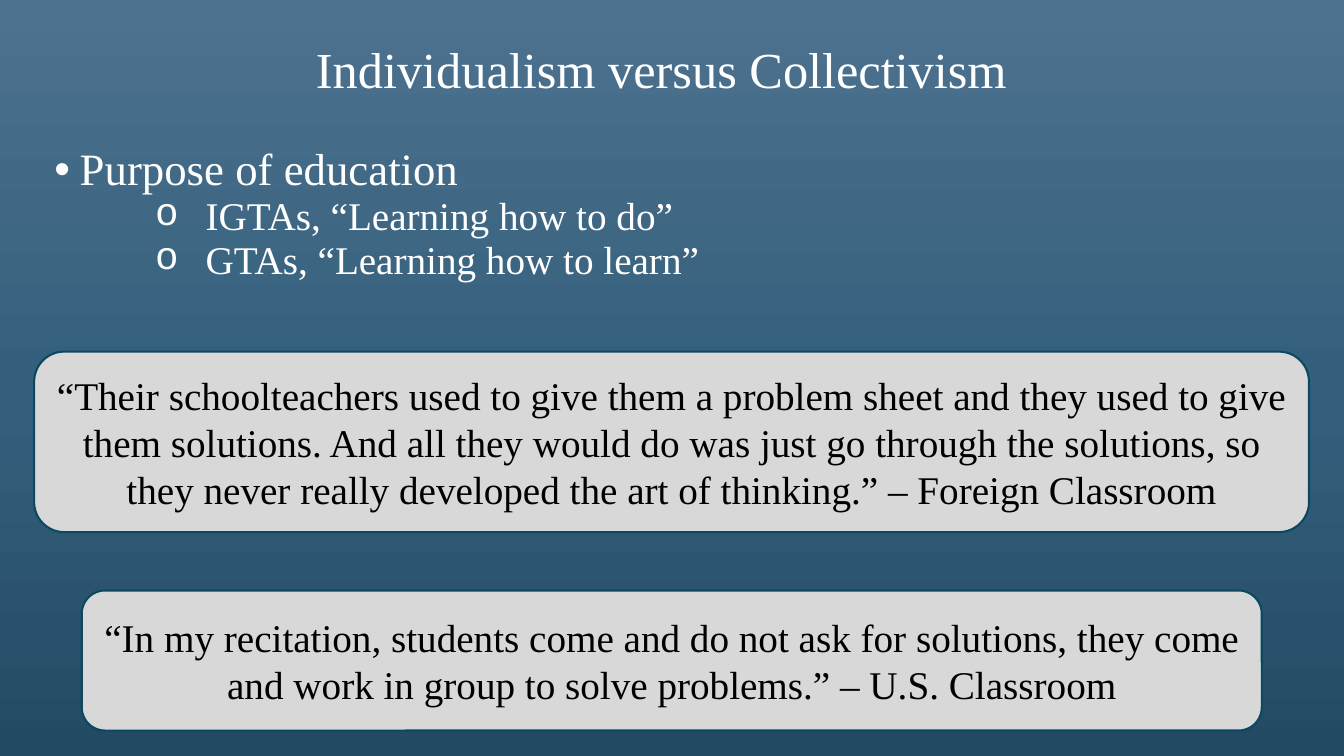
from copy import deepcopy

from lxml import etree
from pptx import Presentation
from pptx import util as u
from pptx.dml.color import RGBColor
from pptx.enum import shapes, text
from pptx.oxml.ns import qn


def colour(code):
    """Turn a hex string into a colour."""
    return RGBColor.from_string(code)


class Deck:
    """Hold the style and the current slide."""

    font = "Times New Roman"
    light, dark = "FFFFFF", "000000"
    panel, border = "D8D8D8", "0B4960"
    sky = [(0, "4D728F"), (0.5, "35607D"), (1, "234A63")]

    def __init__(self):
        """Start a wide presentation with one title-only slide."""
        self.deck = Presentation()
        self.deck.slide_width, self.deck.slide_height = u.Cm(33.87), u.Cm(19.05)
        self.slide = self.deck.slides.add_slide(self.deck.slide_layouts[5])

    def background(self):
        """Shade the slide from top to bottom."""
        fill = self.slide.background.fill
        fill.gradient()
        fill.gradient_angle = 270
        stop_list = self.slide.element.find(".//" + qn("a:gsLst"))
        stop_list.append(deepcopy(stop_list[0]))
        for stop, (position, code) in zip(fill.gradient_stops, self.sky):
            stop.position = position
            stop.color.rgb = colour(code)

    def style(self, paragraph, size, code):
        """Format every run of a paragraph."""
        for run in paragraph.runs:
            run.font.name = self.font
            run.font.size = u.Pt(size)
            run.font.color.rgb = colour(code)

    def title(self, wording, box):
        """Fill and place the title."""
        heading = self.slide.shapes.title
        heading.left, heading.top, heading.width, heading.height = map(u.Cm, box)
        frame = heading.text_frame
        frame.text = wording
        frame.word_wrap = True
        frame.auto_size = text.MSO_AUTO_SIZE.NONE
        frame.vertical_anchor = text.MSO_ANCHOR.TOP
        frame.paragraphs[0].alignment = text.PP_ALIGN.CENTER
        self.style(frame.paragraphs[0], 36, self.light)

    def bullet(self, paragraph, symbol, font, margin, hanging):
        """Give a paragraph a hanging bullet."""
        props = paragraph._p.get_or_add_pPr()
        props.set("marL", str(u.Cm(margin)))
        props.set("indent", str(-u.Cm(hanging)))
        tint = etree.SubElement(props, qn("a:buClr"))
        etree.SubElement(tint, qn("a:srgbClr"), val=self.light)
        etree.SubElement(props, qn("a:buFont"), typeface=font)
        etree.SubElement(props, qn("a:buChar"), char=symbol)

    def outline(self, topic, points, box):
        """Write a topic with its indented points."""
        frame = self.slide.shapes.add_textbox(*map(u.Cm, box)).text_frame
        frame.word_wrap = True
        frame.text = "\n".join([topic, *points])
        for paragraph in frame.paragraphs:
            paragraph.line_spacing = 0.9
            paragraph.space_before = u.Pt(1)
        heading, *details = frame.paragraphs
        self.style(heading, 32, self.light)
        self.bullet(heading, "•", "Arial", 0.64, 0.64)
        for detail in details:
            detail.level = 2
            self.style(detail, 28, self.light)
            self.bullet(detail, "o", "Courier New", 3.81, 1.27)

    def quote(self, wording, box):
        """Draw a rounded panel around a quotation."""
        panel = self.slide.shapes.add_shape(
            shapes.MSO_SHAPE.ROUNDED_RECTANGLE, *map(u.Cm, box))
        panel.shadow.inherit = False
        panel.fill.solid()
        panel.fill.fore_color.rgb = colour(self.panel)
        panel.line.color.rgb = colour(self.border)
        panel.line.width = u.Pt(1.5)
        frame = panel.text_frame
        frame.word_wrap = True
        frame.vertical_anchor = text.MSO_ANCHOR.MIDDLE
        frame.text = wording
        frame.paragraphs[0].alignment = text.PP_ALIGN.CENTER
        self.style(frame.paragraphs[0], 28, self.dark)


def main():
    """Build the slide and save it."""
    lesson = Deck()
    lesson.background()
    lesson.title("Individualism versus Collectivism", (0.61, 0.84, 32.13, 3.33))
    lesson.outline(
        "Purpose of education",
        ["IGTAs, “Learning how to do”", "GTAs, “Learning how to learn”"],
        (1.12, 3.58, 28.8, 3.84))
    lesson.quote(
        "“Their schoolteachers used to give them a problem sheet and they used "
        "to give them solutions. And all they would do was just go through the "
        "solutions, so they never really developed the art of thinking.” – "
        "Foreign Classroom",
        (0.86, 8.86, 32.13, 4.55))
    lesson.quote(
        "“In my recitation, students come and do not ask for solutions, they "
        "come and work in group to solve problems.” – U.S. Classroom",
        (2.06, 14.88, 29.74, 3.53))
    lesson.deck.save("out.pptx")


if __name__ == "__main__":
    main()
